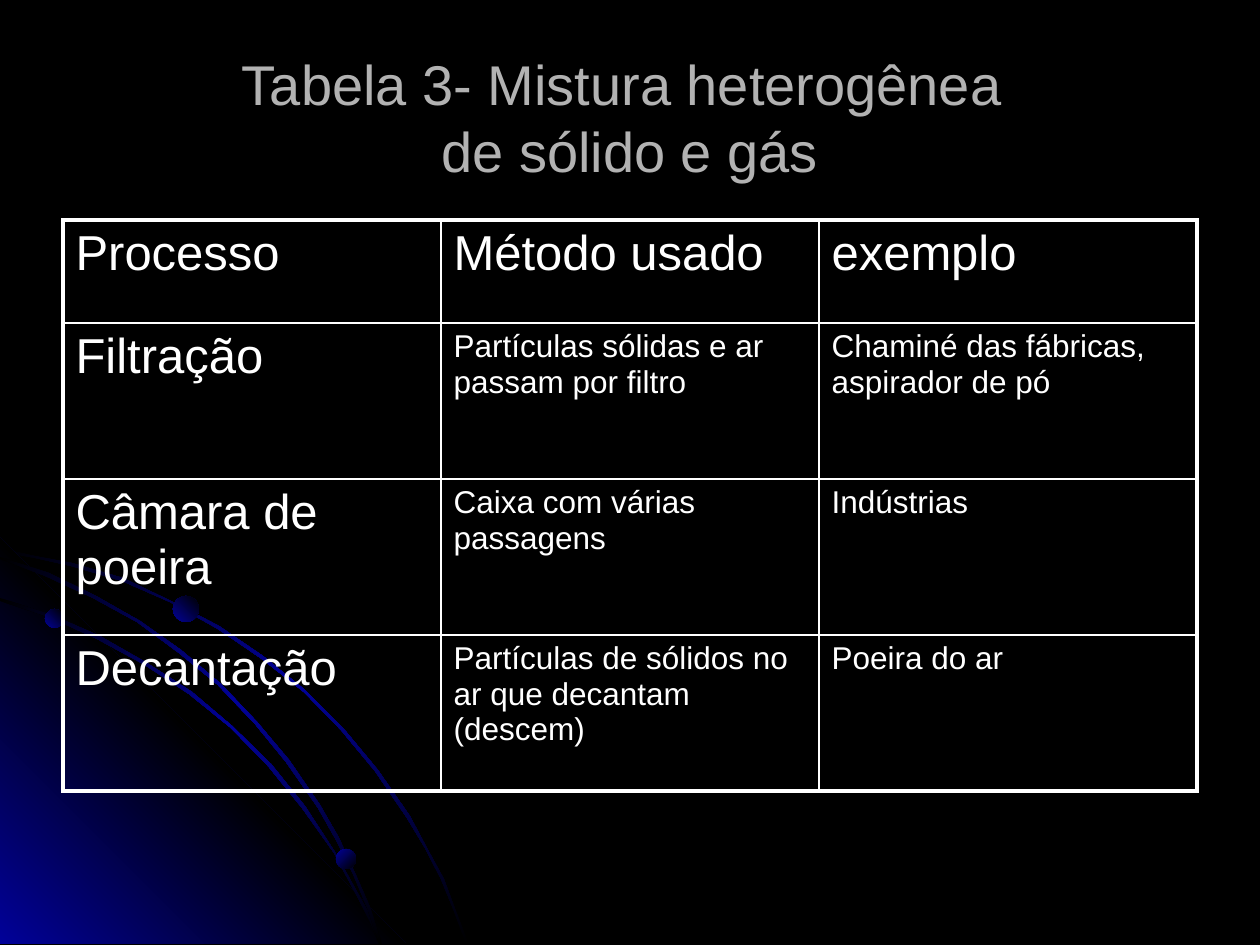
"""Build a slide with a table of solid and gas mixtures over a blue orbit backdrop."""
import pptx
import pptx.dml.color
import pptx.enum.shapes
import pptx.enum.text
import pptx.oxml
import pptx.oxml.ns
import pptx.util

PX = 914400 / 126
WHITE, BLACK, BLUE, GREY = "FFFFFF", "000000", "010199", "B2B2B2"
FONT = "Arial"

TITLE = "Tabela 3- Mistura heterogênea \vde sólido e gás"
TITLE_BOX = (63, 38, 1134, 157)
ROWS = [
    ("Processo", "Método usado", "exemplo"),
    ("Filtração", "Partículas sólidas e ar passam por filtro",
     "Chaminé das fábricas, aspirador de pó"),
    ("Câmara de poeira", "Caixa com várias passagens", "Indústrias"),
    ("Decantação", "Partículas de sólidos no ar que decantam (descem)", "Poeira do ar"),
]
TABLE_LEFT, TABLE_TOP, COLUMN_WIDTH = 63, 220, 378
ROW_HEIGHTS = [103, 156, 156, 156]
OUTER_PT, INNER_PT = 2.25, 1

ARC_STOPS = (BLACK, BLUE, BLACK)
OUTER_ORBIT = [
    (72, 563), (35, 556), (0, 548), (0, 552), (35, 558), (71, 566), (122, 581),
    (170, 602), (218, 629), (262, 659), (304, 692), (341, 730), (375, 771),
    (407, 818), (425, 848), (441, 879), (454, 911), (466, 944), (469, 944),
    (456, 911), (444, 879), (427, 848), (410, 816), (378, 770), (343, 728),
    (305, 690), (263, 656), (219, 626), (171, 601), (123, 578),
]
GLOW = [(406, 944), (0, 944), (0, 538)]
INNER_ORBIT = [
    (359, 900), (370, 922), (379, 944), (382, 944), (373, 920), (360, 897),
    (335, 852), (305, 806), (271, 764), (232, 726), (192, 692), (147, 663),
    (100, 636), (52, 615), (0, 598), (0, 601), (49, 617), (97, 639), (145, 665),
    (189, 694), (231, 728), (268, 766), (302, 808), (334, 853),
]
MIDDLE_ORBIT = [
    (0, 557), (0, 559), (45, 576), (93, 598), (137, 622), (179, 653), (218, 685),
    (255, 724), (286, 762), (318, 808), (336, 840), (353, 874), (368, 910),
    (379, 944), (382, 944), (370, 907), (355, 873), (339, 838), (320, 805),
    (289, 760), (257, 722), (221, 684), (181, 650), (140, 621), (96, 596), (49, 573),
]
OUTLINES = [
    (OUTER_ORBIT, ARC_STOPS, 45),
    (GLOW, (BLUE, BLACK, BLUE), 315),
    (INNER_ORBIT, ARC_STOPS, 45),
    (MIDDLE_ORBIT, ARC_STOPS, 45),
]
PLANETS = [(45, 609, 19, 315), (336, 849, 20, 45), (173, 596, 26, 315)]


def emu(px):
    return pptx.util.Emu(round(px * PX))


def color(value):
    return pptx.dml.color.RGBColor.from_string(value)


def apply(target, values):
    for key, value in values.items():
        setattr(target, key, value)


def style_text(frame, size, value):
    for paragraph in frame.paragraphs:
        for run in paragraph.runs:
            apply(run.font, {"name": FONT, "size": pptx.util.Pt(size)})
            run.font.color.rgb = color(value)


def paint(shape, stops, angle):
    shape.shadow.inherit = False
    shape.line.fill.background()
    shape.fill.gradient()
    properties = shape.element.spPr
    step = 100000 // (len(stops) - 1)
    marks = "".join(
        f'<a:gs pos="{i * step}"><a:srgbClr val="{stop}"/></a:gs>'
        for i, stop in enumerate(stops))
    gradient = pptx.oxml.parse_xml(
        f'<a:gradFill {pptx.oxml.ns.nsdecls("a")} rotWithShape="1">'
        f'<a:gsLst>{marks}</a:gsLst><a:lin ang="{angle * 60000}" scaled="1"/></a:gradFill>')
    properties.replace(properties.find(pptx.oxml.ns.qn("a:gradFill")), gradient)


def add_backdrop(slide):
    for points, stops, angle in OUTLINES:
        builder = slide.shapes.build_freeform(*points[0], scale=PX)
        builder.add_line_segments(points[1:], close=True)
        paint(builder.convert_to_shape(), stops, angle)
    for left, top, size, angle in PLANETS:
        planet = slide.shapes.add_shape(
            pptx.enum.shapes.MSO_SHAPE.OVAL, *map(emu, (left, top, size, size)))
        paint(planet, (BLUE, BLACK), angle)


def add_title(slide):
    frame = slide.shapes.add_textbox(*map(emu, TITLE_BOX)).text_frame
    apply(frame, {"word_wrap": True,
                  "vertical_anchor": pptx.enum.text.MSO_ANCHOR.MIDDLE})
    frame.paragraphs[0].text = TITLE
    frame.paragraphs[0].alignment = pptx.enum.text.PP_ALIGN.CENTER
    style_text(frame, 32, GREY)


def add_borders(cell, outer_sides):
    properties = cell._tc.get_or_add_tcPr()
    for side, outer in outer_sides.items():
        width = pptx.util.Pt(OUTER_PT if outer else INNER_PT)
        properties.append(pptx.oxml.parse_xml(
            f'<a:ln{side} {pptx.oxml.ns.nsdecls("a")} w="{width}"><a:solidFill>'
            f'<a:srgbClr val="{WHITE}"/></a:solidFill></a:ln{side}>'))


def add_methods_table(slide):
    last_row, last_column = len(ROWS) - 1, len(ROWS[0]) - 1
    box = (TABLE_LEFT, TABLE_TOP, COLUMN_WIDTH * len(ROWS[0]), sum(ROW_HEIGHTS))
    table = slide.shapes.add_table(len(ROWS), len(ROWS[0]), *map(emu, box)).table
    apply(table, {"first_row": False, "horz_banding": False})
    for column in table.columns:
        column.width = emu(COLUMN_WIDTH)
    for r, (texts, height) in enumerate(zip(ROWS, ROW_HEIGHTS)):
        table.rows[r].height = emu(height)
        for c, text in enumerate(texts):
            cell = table.cell(r, c)
            cell.text = text
            style_text(cell.text_frame, 28 if r == 0 or c == 0 else 18, WHITE)
            add_borders(cell, {"L": c == 0, "R": c == last_column,
                               "T": r == 0, "B": r == last_row})
            cell.fill.background()


def main():
    deck = pptx.Presentation()
    apply(deck, {"slide_width": emu(1260), "slide_height": emu(945)})
    slide = deck.slides.add_slide(deck.slide_layouts[6])
    slide.background.fill.solid()
    slide.background.fill.fore_color.rgb = color(BLACK)
    add_backdrop(slide)
    add_title(slide)
    add_methods_table(slide)
    deck.save("out.pptx")


if __name__ == "__main__":
    main()
